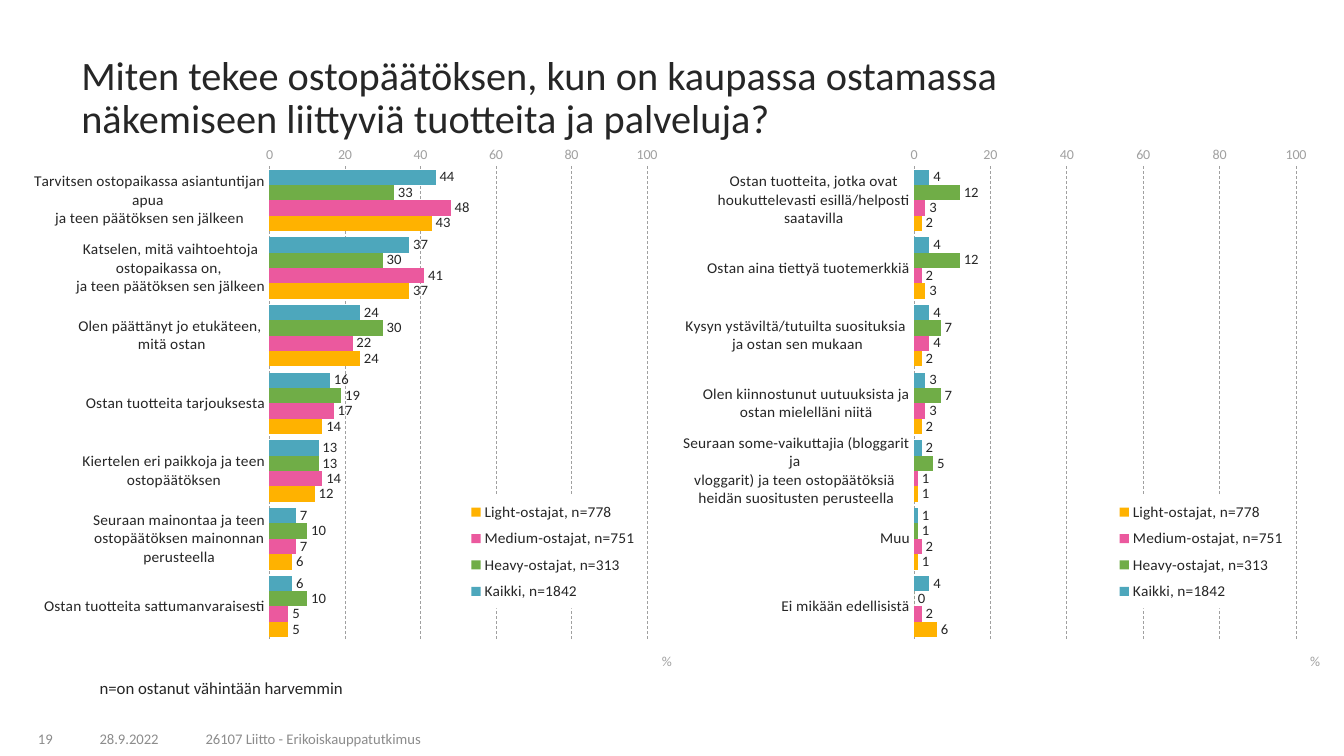
from dataclasses import dataclass
from typing import NamedTuple

from lxml.etree import SubElement
from pptx import Presentation
from pptx.chart.data import CategoryChartData
from pptx.dml.color import RGBColor
from pptx.enum.chart import XL_AXIS_CROSSES as Crosses
from pptx.enum.chart import XL_CHART_TYPE as ChartType
from pptx.enum.chart import XL_LABEL_POSITION as LabelPosition
from pptx.enum.chart import XL_LEGEND_POSITION as LegendPosition
from pptx.enum.chart import XL_TICK_MARK as TickMark
from pptx.enum.dml import MSO_LINE as LineDash
from pptx.enum.text import MSO_ANCHOR as Anchor
from pptx.enum.text import PP_ALIGN as Align
from pptx.oxml import parse_xml
from pptx.oxml.ns import nsdecls, qn
from pptx.util import Cm, Pt


@dataclass(frozen=True)
class Theme:
    font: str = "Calibri"
    ink: str = "262626"
    footer: str = "8C8C8C"
    axis: str = "A0A0A0"
    title_size: float = 28.8
    note_size: float = 12
    label_size: float = 11
    small_size: float = 10.5
    axis_size: float = 10


THEME = Theme()


class Box(NamedTuple):
    left: float
    top: float
    width: float
    height: float

    def lengths(self) -> tuple:
        return tuple(Cm(value) for value in self)


@dataclass(frozen=True)
class Label:
    lines: tuple[str, ...]
    box: Box
    size: float
    color: str
    align: Align = Align.LEFT
    anchor: Anchor = Anchor.BOTTOM
    spacing: float = 1.0


class BuyerGroup(NamedTuple):
    name: str
    color: str


class Reason(NamedTuple):
    text: str
    shares: tuple[int, ...]


@dataclass(frozen=True)
class Panel:
    left: float
    plot_left: float
    plot_width: float
    reasons: tuple[Reason, ...]


GROUPS = (
    BuyerGroup("Kaikki, n=1842", "4DA7BC"),
    BuyerGroup("Heavy-ostajat, n=313", "70AD47"),
    BuyerGroup("Medium-ostajat, n=751", "EB599E"),
    BuyerGroup("Light-ostajat, n=778", "FFB200"),
)

PANELS = (
    Panel(0.81, 0.369, 0.587, (
        Reason("Tarvitsen ostopaikassa asiantuntijan apua \nja teen päätöksen sen jälkeen", (44, 33, 48, 43)),
        Reason("Katselen, mitä vaihtoehtoja ostopaikassa on, \nja teen päätöksen sen jälkeen", (37, 30, 41, 37)),
        Reason("Olen päättänyt jo etukäteen, \nmitä ostan", (24, 30, 22, 24)),
        Reason("Ostan tuotteita tarjouksesta", (16, 19, 17, 14)),
        Reason("Kiertelen eri paikkoja ja teen ostopäätöksen", (13, 13, 14, 12)),
        Reason("Seuraan mainontaa ja teen ostopäätöksen mainonnan perusteella", (7, 10, 7, 6)),
        Reason("Ostan tuotteita sattumanvaraisesti", (6, 10, 5, 5)),
    )),
    Panel(17.15, 0.363, 0.594, (
        Reason("Ostan tuotteita, jotka ovat houkuttelevasti esillä/helposti saatavilla", (4, 12, 3, 2)),
        Reason("Ostan aina tiettyä tuotemerkkiä", (4, 12, 2, 3)),
        Reason("Kysyn ystäviltä/tutuilta suosituksia \nja ostan sen mukaan", (4, 7, 4, 2)),
        Reason("Olen kiinnostunut uutuuksista ja ostan mielelläni niitä", (3, 7, 3, 2)),
        Reason("Seuraan some-vaikuttajia (bloggarit ja \nvloggarit) ja teen ostopäätöksiä \n"
               "heidän suositusten perusteella", (2, 5, 1, 1)),
        Reason("Muu", (1, 1, 2, 1)),
        Reason("Ei mikään edellisistä", (4, 0, 2, 6)),
    )),
)

LABELS = (
    Label(("Miten tekee ostopäätöksen, kun on kaupassa ostamassa",
           "näkemiseen liittyviä tuotteita ja palveluja?"),
          Box(1.8, 1.63, 30.66, 1.73), THEME.title_size, THEME.ink, anchor=Anchor.MIDDLE, spacing=0.9),
    Label(("n=on ostanut vähintään harvemmin",), Box(2.26, 17.02, 9.27, 0.71),
          THEME.note_size, THEME.ink, anchor=Anchor.TOP, spacing=0.9),
    Label(("19",), Box(0.08, 18.19, 1.5, 0.76), THEME.small_size, THEME.footer, Align.RIGHT),
    Label(("28.9.2022",), Box(1.68, 18.19, 3.15, 0.76), THEME.small_size, THEME.footer, Align.CENTER),
    Label(("26107 Liitto - Erikoiskauppatutkimus",), Box(4.93, 18.19, 15.04, 0.76),
          THEME.small_size, THEME.footer),
)


def style_font(font, size: float, color: str) -> None:
    font.name = THEME.font
    font.size = Pt(size)
    font.bold = False
    font.color.rgb = RGBColor.from_string(color)


def add_label(slide, label: Label) -> None:
    frame = slide.shapes.add_textbox(*label.box.lengths()).text_frame
    frame.word_wrap = True
    frame.vertical_anchor = label.anchor
    paragraph = frame.paragraphs[0]
    paragraph.alignment = label.align
    paragraph.line_spacing = label.spacing
    for index, line in enumerate(label.lines):
        if index:
            paragraph.add_line_break()
        run = paragraph.add_run()
        run.text = line
        style_font(run.font, label.size, label.color)


def place(element, position: int, inner: bool = False, **fractions: float) -> None:
    for old_layout in element.findall(qn("c:layout")):
        element.remove(old_layout)
    layout = parse_xml(f"<c:layout {nsdecls('c')}><c:manualLayout/></c:layout>")
    manual = layout[0]
    if inner:
        SubElement(manual, qn("c:layoutTarget")).set("val", "inner")
    for key in ("xMode", "yMode"):
        SubElement(manual, qn(f"c:{key}")).set("val", "edge")
    for key, value in fractions.items():
        SubElement(manual, qn(f"c:{key}")).set("val", str(value))
    element.insert(position, layout)


def style_axes(chart) -> None:
    reasons, percent = chart.category_axis, chart.value_axis
    for axis, size, color in ((reasons, THEME.label_size, THEME.ink), (percent, THEME.axis_size, THEME.axis)):
        axis.major_tick_mark = axis.minor_tick_mark = TickMark.NONE
        axis.format.line.fill.background()
        style_font(axis.tick_labels.font, size, color)
    reasons.reverse_order = True
    reasons.crosses = Crosses.MAXIMUM
    percent.minimum_scale, percent.maximum_scale, percent.major_unit = 0, 100, 20
    percent.has_major_gridlines = True
    grid = percent.major_gridlines.format.line
    grid.color.rgb = RGBColor.from_string(THEME.axis)
    grid.width = Pt(0.5)
    grid.dash_style = LineDash.DASH
    frame = percent.axis_title.text_frame
    run = frame.paragraphs[0].add_run()
    run.text = "%"
    style_font(run.font, THEME.axis_size, THEME.axis)
    title = chart.element.find(".//" + qn("c:valAx")).find(qn("c:title"))
    title.find(".//" + qn("a:bodyPr")).set("rot", "0")
    place(title, 1, x=0.975, y=0.95)


def add_legend(chart) -> None:
    chart.has_legend = True
    legend = chart.legend
    legend.position = LegendPosition.RIGHT
    legend.include_in_layout = False
    style_font(legend.font, THEME.label_size, THEME.ink)
    element = chart.element.find(".//" + qn("c:legend"))
    place(element, 1, x=0.665, y=0.65, w=0.29, h=0.22)
    element.find(qn("c:overlay")).addnext(parse_xml(
        f"<c:spPr {nsdecls('c', 'a')}><a:solidFill><a:srgbClr val='FFFFFF'/></a:solidFill></c:spPr>"))


def add_panel(slide, panel: Panel) -> None:
    data = CategoryChartData()
    data.categories = [reason.text for reason in panel.reasons]
    for index, group in enumerate(GROUPS):
        data.add_series(group.name, [reason.shares[index] for reason in panel.reasons])
    box = Box(panel.left, 3.71, 16.21, 13.31)
    chart = slide.shapes.add_chart(ChartType.BAR_CLUSTERED, *box.lengths(), data).chart
    chart.has_title = False
    style_font(chart.font, THEME.note_size, THEME.ink)
    plot = chart.plots[0]
    plot.gap_width, plot.overlap = 40, 0
    plot.vary_by_categories = False
    for series, group in zip(plot.series, GROUPS):
        series.format.fill.solid()
        series.format.fill.fore_color.rgb = RGBColor.from_string(group.color)
        labels = series.data_labels
        labels.show_value = True
        labels.position = LabelPosition.OUTSIDE_END
        labels.number_format = "#,##0"
        labels.number_format_is_linked = False
        style_font(labels.font, THEME.small_size, THEME.ink)
    style_axes(chart)
    add_legend(chart)
    place(chart.element.find(".//" + qn("c:plotArea")), 0, inner=True,
          x=panel.plot_left, y=0.012, w=panel.plot_width, h=0.92)


def main() -> None:
    presentation = Presentation()
    presentation.slide_width, presentation.slide_height = Cm(33.87), Cm(19.05)
    slide = presentation.slides.add_slide(presentation.slide_layouts[6])
    for label in LABELS:
        add_label(slide, label)
    for panel in PANELS:
        add_panel(slide, panel)
    presentation.save("out.pptx")


if __name__ == "__main__":
    main()
